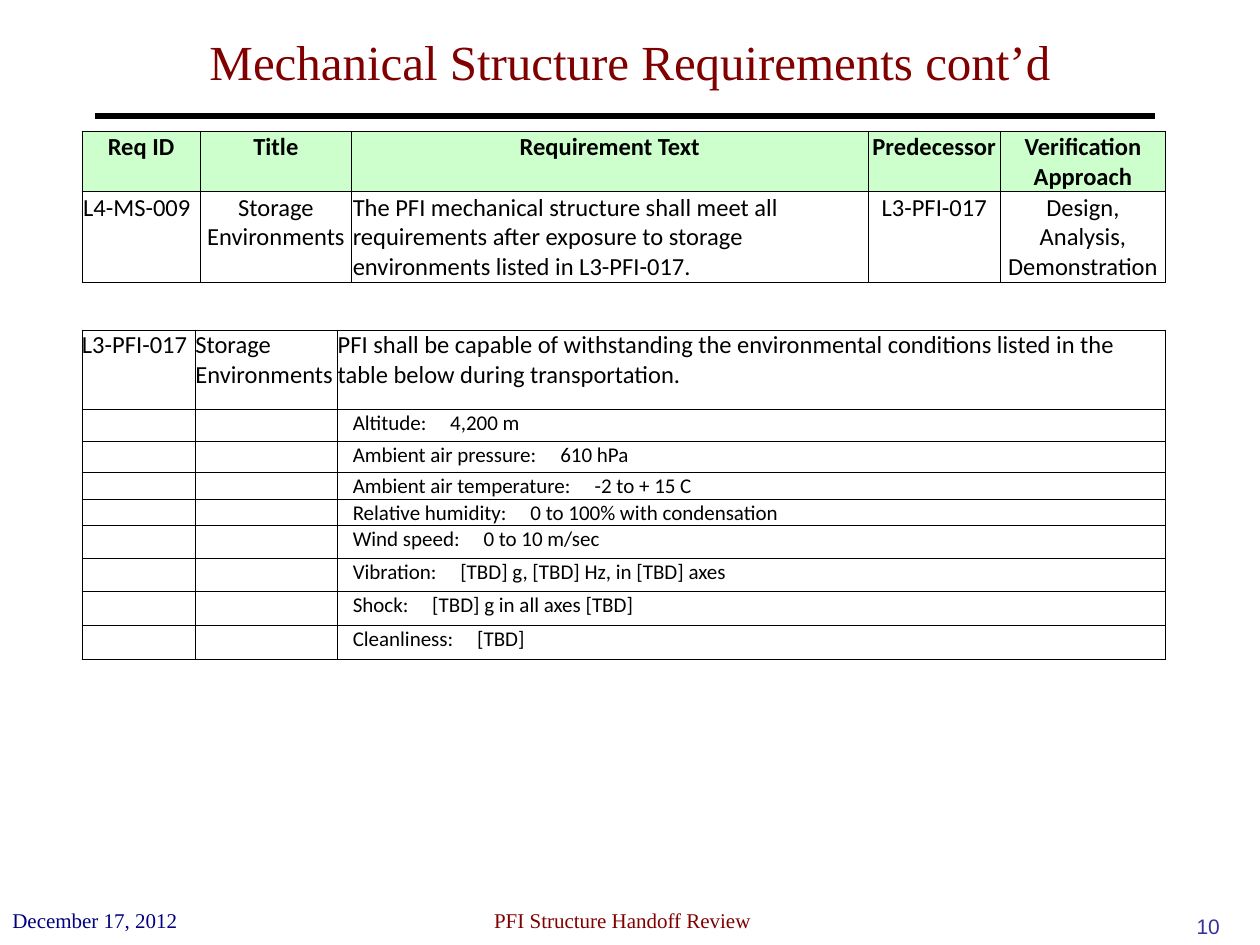
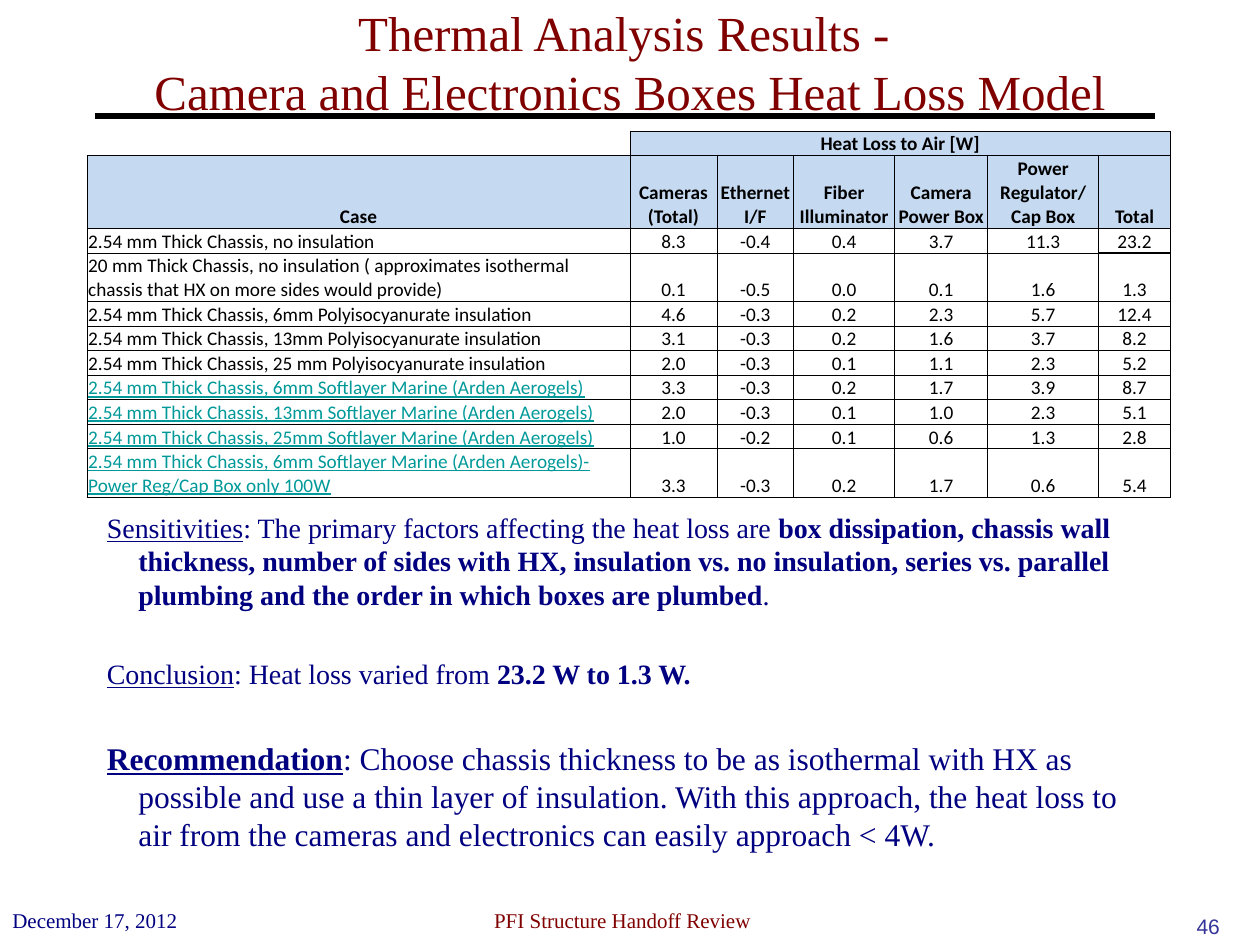
from dataclasses import dataclass
from lxml.etree import SubElement
from pptx import Presentation
from pptx.dml.color import RGBColor as RGB
from pptx.enum.shapes import MSO_CONNECTOR as LINE
from pptx.enum.text import MSO_ANCHOR as ANCHOR, MSO_AUTO_SIZE as FIT, PP_ALIGN as ALIGN
from pptx.oxml import parse_xml
from pptx.oxml.ns import nsdecls, qn
from pptx.util import Inches, Pt


@dataclass(frozen=True)
class Theme:
    red: str = "800000"
    navy: str = "000080"
    blue: str = "333399"
    teal: str = "009999"
    black: str = "000000"
    green: str = "CCFFCC"
    sky: str = "C5D9F1"
    serif: str = "Times New Roman"
    sans: str = "Calibri"
    plain: str = "Arial"
    title: int = 28
    lead: int = 18
    body: int = 16
    cell: int = 14
    small: int = 12
    tiny: int = 11


T = Theme()
deck = Presentation()
deck.slide_width, deck.slide_height = Inches(10), Inches(7.5)
# A grid of 100 columns by 75 rows
COL, ROW = deck.slide_width / 100, deck.slide_height / 75


def style(para, size, face, color, align=ALIGN.LEFT, bold=False):
    para.alignment = align
    font = para.font
    font.size, font.name, font.bold = Pt(size), face, bold
    font.color.rgb = RGB.from_string(color)


def draw_table(slide, x, y, cols, rows, cells, size, heads, fill, mid, pad, anchor):
    """Bordered table; the first `heads` rows are filled, `mid` columns centred."""
    frame = slide.shapes.add_table(len(rows), len(cols), int(x * COL), int(y * ROW),
                                   int(sum(cols) * COL), int(sum(rows) * ROW))
    table = frame.table
    table.first_row = table.horz_banding = False
    for col, wide in zip(table.columns, cols):
        col.width = int(wide * COL)
    for r, (row, high) in enumerate(zip(table.rows, rows)):
        row.height = int(high * ROW)
        for c, cell in enumerate(row.cells):
            head = r < heads
            cell.text = cells[r][c]
            cell.vertical_anchor = anchor
            cell.margin_left = cell.margin_right = cell.margin_top = Inches(pad)
            cell.margin_bottom = 0
            style(cell.text_frame.paragraphs[0], size, T.sans, T.black,
                  ALIGN.CENTER if head or c in mid else ALIGN.LEFT, head)
            if head:
                cell.fill.solid()
                cell.fill.fore_color.rgb = RGB.from_string(fill)
            else:
                cell.fill.background()
            for i, side in enumerate("LRTB"):
                cell._tc.get_or_add_tcPr().insert(i, parse_xml(
                    f'<a:ln{side} {nsdecls("a")} w="{Pt(0.5)}"><a:solidFill>'
                    f'<a:srgbClr val="{T.black}"/></a:solidFill></a:ln{side}>'))
    return table


# Title, rule and footers of both slides
pages = []
for name, num in (
    ("Mechanical Structure Requirements cont’d", "10"),
    ("Thermal Analysis Results - \vCamera and Electronics Boxes Heat Loss Model", "46"),
):
    slide = deck.slides.add_slide(deck.slide_layouts[5])
    pages.append(slide)
    title = slide.shapes.title
    title.left, title.top = int(7.5 * COL), int(0.8 * ROW)
    title.width, title.height = int(85 * COL), int(8.1 * ROW)
    title.text_frame.text = name
    title.text_frame.auto_size = FIT.NONE
    title.text_frame.vertical_anchor = ANCHOR.MIDDLE
    style(title.text_frame.paragraphs[0], T.title, T.serif, T.red, ALIGN.CENTER)

    rule = slide.shapes.add_connector(LINE.STRAIGHT, int(7.5 * COL), int(9.2 * ROW),
                                      int(91.7 * COL), int(9.2 * ROW))
    rule.line.width = Pt(3)
    rule.line.color.rgb = RGB.from_string(T.black)
    SubElement(rule.element.spPr, qn("a:effectLst"))
    title.element.addprevious(rule.element)

    for text, x, y, wide, face, color, align in (
        (num, 77.5, 72, 20.3, T.plain, T.blue, ALIGN.RIGHT),
        ("December 17, 2012", 0, 71.5, 23.3, T.serif, T.navy, ALIGN.LEFT),
        (" PFI Structure Handoff Review", 31.7, 71.5, 35, T.serif, T.red, ALIGN.CENTER),
    ):
        foot = slide.shapes.add_textbox(int(x * COL), int(y * ROW), int(wide * COL), int(3 * ROW))
        foot.text_frame.word_wrap = True
        foot.text_frame.text = text
        style(foot.text_frame.paragraphs[0], T.small, face, color, align)

needs, heat = pages

# Slide 1: the requirement
draw_table(
    needs, 6.5, 10.4, (9.4, 12, 41, 10.5, 13.1), (4.8, 7.2),
    (("Req ID", "Title", "Requirement Text", "Predecessor", "Verification Approach"),
     ("L4-MS-009", "Storage Environments",
      "The PFI mechanical structure shall meet all requirements after exposure to "
      "storage environments listed in L3-PFI-017.",
      "L3-PFI-017", "Design, Analysis, Demonstration")),
    T.cell, 1, T.green, (1, 3, 4), 0.01, ANCHOR.TOP)

# Slide 1: the parent requirement and its conditions
limits = (
    ("Altitude:", "4,200 m"),
    ("Ambient air pressure:", "610 hPa"),
    ("Ambient air temperature:", "-2 to + 15 C"),
    ("Relative humidity:", "0 to 100% with condensation"),
    ("Wind speed:", "0 to 10 m/sec"),
    ("Vibration:", "[TBD] g, [TBD] Hz, in [TBD] axes"),
    ("Shock:", "[TBD] g in all axes [TBD]"),
    ("Cleanliness:", "[TBD]"),
)
parent = ("L3-PFI-017", "Storage Environments",
          "PFI shall be capable of withstanding the environmental conditions listed in the "
          "table below during transportation.")
store = draw_table(
    needs, 6.5, 26.2, (9, 11.3, 65.7), (6.3, 2.5, 2.5, 2.1, 2.1, 2.6, 2.6, 2.7, 2.7),
    (parent, *[("", "", "")] * len(limits)), T.cell, 0, None, (), 0, ANCHOR.TOP)
for r, (label, value) in enumerate(limits, 1):
    for c in range(3):
        store.cell(r, c).text_frame.paragraphs[0].font.size = Pt(T.small)
    cell = store.cell(r, 2)
    cell.margin_left, cell.margin_top = Inches(0.12), Inches(0.01)
    para = cell.text_frame.paragraphs[0]
    for text in (label, " ", value):
        run = para.add_run()
        run.text = text
        if text == " ":
            run.font._element.set("spc", "1080")  # one wide space

# Slide 2: heat loss by case
foam = "Polyisocyanurate insulation"
gel = "Softlayer Marine (Arden Aerogels)"
base = "2.54 mm Thick Chassis"
cases = (
    (f"{base}, no insulation", "8.3 -0.4 0.4 3.7 11.3 23.2"),
    ("20 mm Thick Chassis, no insulation ( approximates isothermal chassis that HX on "
     "more sides would provide)", "0.1 -0.5 0.0 0.1 1.6 1.3"),
    (f"{base}, 6mm {foam}", "4.6 -0.3 0.2 2.3 5.7 12.4"),
    (f"{base}, 13mm {foam}", "3.1 -0.3 0.2 1.6 3.7 8.2"),
    (f"{base}, 25 mm {foam}", "2.0 -0.3 0.1 1.1 2.3 5.2"),
    (f"{base}, 6mm {gel}", "3.3 -0.3 0.2 1.7 3.9 8.7"),
    (f"{base}, 13mm {gel}", "2.0 -0.3 0.1 1.0 2.3 5.1"),
    (f"{base}, 25mm {gel}", "1.0 -0.2 0.1 0.6 1.3 2.8"),
    (f"{base}, 6mm {gel}- Power Reg/Cap Box only 100W", "3.3 -0.3 0.2 1.7 0.6 5.4"),
)
loss = draw_table(
    heat, 6.9, 10.4, (43.1, 6.9, 6.1, 8, 7.4, 8.8, 5.7),
    (1.9, 5.8, 1.95, 3.85, *[1.95] * 6, 3.85),
    (("", "Heat Loss to Air [W]", *[""] * 5),
     ("Case", "Cameras (Total)", "Ethernet I/F", "Fiber Illuminator", "Camera Power Box",
      "Power Regulator/ Cap Box", "Total"),
     *((case, *nums.split()) for case, nums in cases)),
    T.tiny, 2, T.sky, range(1, 7), 0.01, ANCHOR.BOTTOM)
loss.cell(0, 1).merge(loss.cell(0, 6))
corner = loss.cell(0, 0)
corner.fill.background()
for side in "LT":
    edge = corner._tc.tcPr.find(qn(f"a:ln{side}"))
    corner._tc.tcPr.remove(edge)
for r, (case, nums) in enumerate(cases, 2):
    if gel in case:
        font = loss.cell(r, 0).text_frame.paragraphs[0].font
        font.underline = True
        font.color.rgb = RGB.from_string(T.teal)
# Heavier frame around the largest total
for r, c, sides in ((2, 6, "LRTB"), (1, 6, "B"), (2, 5, "R"), (3, 6, "T")):
    for side in sides:
        loss.cell(r, c)._tc.tcPr.find(qn(f"a:ln{side}")).set("w", str(Pt(1)))

# Slide 2: findings; each part is text, bold, underlined
notes = (
    (T.body, 3, (("Sensitivities", False, True),
                 (": The primary factors affecting the heat loss are ", False, False),
                 ("box dissipation, chassis wall thickness, number of sides with HX, insulation "
                  "vs. no insulation, series vs. parallel plumbing and the order in which boxes "
                  "are plumbed", True, False),
                 (".", False, False))),
    (T.body, 26, (("Conclusion", False, True),
                  (": Heat loss varied from ", False, False),
                  ("23.2 W to 1.3 W.", True, False))),
    (T.lead, 28, (("Recommendation", True, True),
                  (": Choose chassis thickness to be as isothermal with HX as possible and use a "
                   "thin layer of insulation. With this approach, the heat loss to air from the "
                   "cameras and electronics can easily approach < 4W.", False, False))),
)
body = heat.shapes.add_textbox(int(7.5 * COL), int(40 * ROW), int(85 * COL), int(31.1 * ROW))
body.text_frame.word_wrap = True
for i, (size, gap, parts) in enumerate(notes):
    para = body.text_frame.add_paragraph() if i else body.text_frame.paragraphs[0]
    style(para, size, T.serif, T.navy)
    para.space_before = Pt(gap)
    hang = para._p.get_or_add_pPr()
    hang.set("marL", str(Inches(0.25)))
    hang.set("indent", str(-Inches(0.25)))
    for text, bold, under in parts:
        run = para.add_run()
        run.text = text
        run.font.bold, run.font.underline = bold, under

deck.save("out.pptx")
